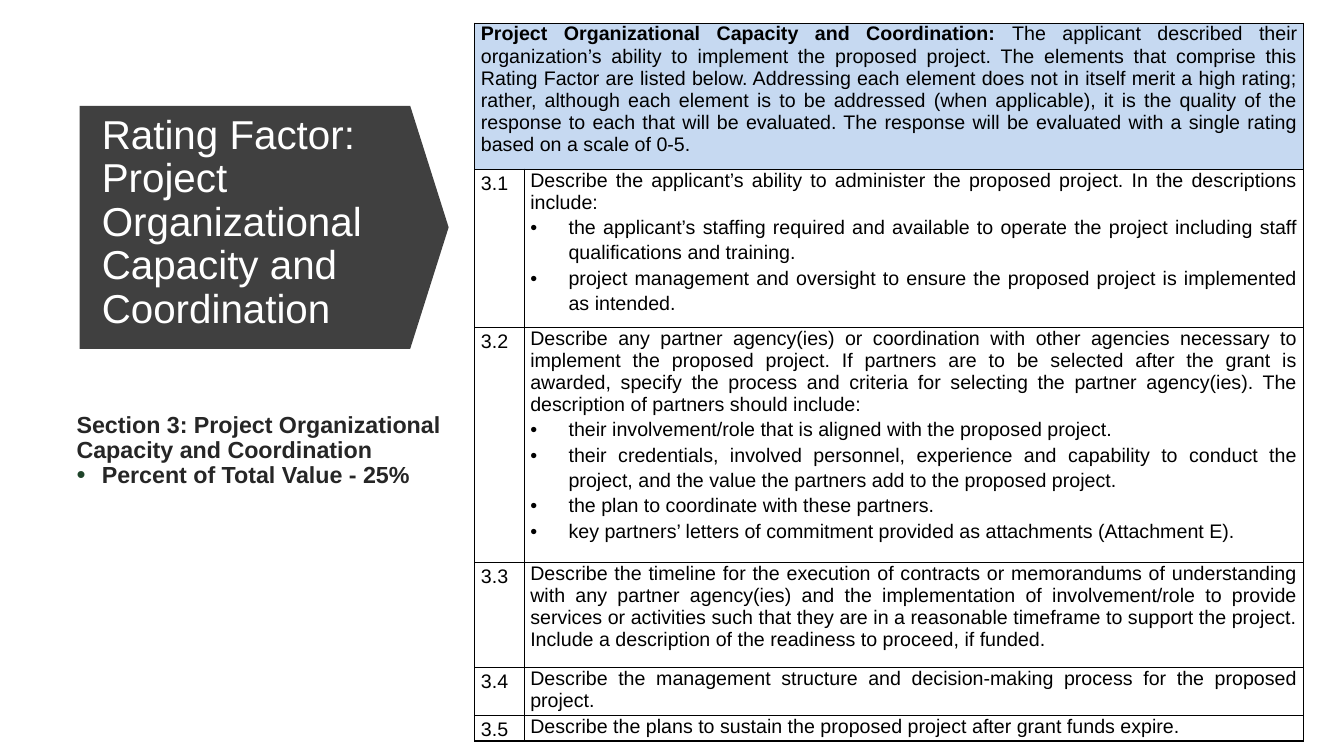
from lxml import etree
from pptx import Presentation
from pptx.dml.color import RGBColor
from pptx.enum.shapes import MSO_SHAPE
from pptx.enum.text import MSO_ANCHOR, MSO_AUTO_SIZE, PP_ALIGN
from pptx.oxml.ns import qn
from pptx.util import Inches, Pt

DOWN_ARROW = MSO_SHAPE.DOWN_ARROW
TOP, MIDDLE = MSO_ANCHOR.TOP, MSO_ANCHOR.MIDDLE
LEFT, JUSTIFY = PP_ALIGN.LEFT, PP_ALIGN.JUSTIFY
NO_AUTOFIT = MSO_AUTO_SIZE.NONE

WHITE = RGBColor(0xFF, 0xFF, 0xFF)
BLACK = RGBColor(0, 0, 0)
CHARCOAL = RGBColor(0x40, 0x40, 0x40)
INK = RGBColor(0x26, 0x26, 0x26)
GREEN = RGBColor(0x1F, 0x44, 0x2A)
PALE_BLUE = RGBColor(0xC6, 0xD9, 0xF1)

SLIDE_WIDTH, SLIDE_HEIGHT = 13.33, 7.5
ARROW_BOX = (0.79, 1.05, 3.66, 2.41)
SECTION_BOX = (0.66, 4.05, 4.07, 0.95)
TABLE_BOX = (4.71, 0.23, 8.22, 7.12)
COLUMN_WIDTHS = (0.49, 7.73)
ROW_HEIGHTS = (1.45, 1.57, 2.33, 1.04, 0.48, 0.25)

TITLE = "Rating Factor: Project Organizational Capacity and Coordination"
SECTION = "Section 3: Project Organizational Capacity and Coordination"
SECTION_VALUE = "Percent of Total Value - 25%"
FACTOR_NAME = "Project Organizational Capacity and Coordination: "
FACTOR_TEXT = (
    "The applicant described their organization’s ability to implement the proposed project. "
    "The elements that comprise this Rating Factor are listed below. Addressing each element "
    "does not in itself merit a high rating; rather, although each element is to be addressed "
    "(when applicable), it is the quality of the response to each that will be evaluated. "
    "The response will be evaluated with a single rating based on a scale of 0-5."
)
ELEMENTS = [
    ("3.1", "Describe the applicant’s ability to administer the proposed project. "
            "In the descriptions include:",
     ["the applicant’s staffing required and available to operate the project including "
      "staff qualifications and training.",
      "project management and oversight to ensure the proposed project is implemented "
      "as intended."]),
    ("3.2", "Describe any partner agency(ies) or coordination with other agencies necessary to "
            "implement the proposed project. If partners are to be selected after the grant is "
            "awarded, specify the process and criteria for selecting the partner agency(ies). "
            "The description of partners should include:",
     ["their involvement/role that is aligned with the proposed project.",
      "their credentials, involved personnel, experience and capability to conduct the "
      "project, and the value the partners add to the proposed project.",
      "the plan to coordinate with these partners.",
      "key partners’ letters of commitment provided as attachments (Attachment E)."]),
    ("3.3", "Describe the timeline for the execution of contracts or memorandums of "
            "understanding with any partner agency(ies) and the implementation of "
            "involvement/role to provide services or activities such that they are in a "
            "reasonable timeframe to support the project. Include a description of the "
            "readiness to proceed, if funded.", []),
    ("3.4", "Describe the management structure and decision-making process for the "
            "proposed project.", []),
    ("3.5", "Describe the plans to sustain the proposed project after grant funds expire.", []),
]


def set_all(target, values):
    """Set every named attribute on the target."""
    for name, value in values.items():
        setattr(target, name, value)


def place(shape, box):
    """Move a shape to a box given in inches."""
    set_all(shape, dict(zip(("left", "top", "width", "height"), map(Inches, box))))


def add_span(para, text, size, color, bold=False):
    """Add one formatted run to a paragraph."""
    span = para.add_run()
    span.text = text
    set_all(span.font, {"name": "Arial", "size": Pt(size), "bold": bold})
    span.font.color.rgb = color


def next_para(frame, **values):
    """Return the empty first paragraph or a new one, with its spacing set."""
    first = frame.paragraphs[0]
    para = frame.add_paragraph() if first.runs else first
    set_all(para, {"space_before": Pt(0), "space_after": Pt(0), **values})
    return para


def set_bullet(para, indent=0, color=None):
    """Give a paragraph a hanging bullet, or none when the indent is zero."""
    properties = para._p.get_or_add_pPr()
    properties.set("marL", str(Inches(indent)))
    properties.set("indent", str(-Inches(indent)))
    if not indent:
        etree.SubElement(properties, qn("a:buNone"))
        return
    if color is not None:
        tint = etree.SubElement(properties, qn("a:buClr"))
        etree.SubElement(tint, qn("a:srgbClr"), val=str(color))
        etree.SubElement(properties, qn("a:buSzPct"), val="110000")
    etree.SubElement(properties, qn("a:buFont"), typeface="Arial")
    etree.SubElement(properties, qn("a:buChar"), char="•")


def add_title_arrow(page, box):
    """Place the title on a dark arrow that points right and fills the box."""
    left, top, width, height = box
    shift = (width - height) / 2
    arrow = page.shapes.add_shape(DOWN_ARROW, 0, 0, 0, 0)
    place(arrow, (left + shift, top - shift, height, width))
    arrow.rotation = 270
    arrow.adjustments[0], arrow.adjustments[1] = 1, 0.158
    arrow.shadow.inherit = False
    arrow.fill.solid()
    arrow.fill.fore_color.rgb = CHARCOAL
    arrow.line.fill.background()

    title = page.shapes.title
    title.element.addprevious(arrow.element)
    place(title, (left + 0.12, top, width - 0.39, height - 0.08))
    frame = title.text_frame
    set_all(frame, {"word_wrap": True, "auto_size": NO_AUTOFIT, "vertical_anchor": MIDDLE})
    para = next_para(frame, alignment=LEFT, line_spacing=0.9)
    add_span(para, TITLE, 28.8, WHITE)


def add_section(page, box):
    """Place the section name and its share of the total value."""
    body = page.placeholders[1]
    place(body, box)
    frame = body.text_frame
    set_all(frame, {"word_wrap": True, "auto_size": NO_AUTOFIT, "vertical_anchor": TOP})
    for text, indent in ((SECTION, 0), (SECTION_VALUE, 0.25)):
        para = next_para(frame, alignment=LEFT, line_spacing=0.9)
        set_bullet(para, indent, GREEN)
        add_span(para, text, 16.6, INK, True)


def format_cell(cell, fill=None):
    """Set the margins, thin black borders and fill of a cell."""
    set_all(cell, {"margin_left": Inches(0.06), "margin_right": Inches(0.06),
                   "margin_top": 0, "margin_bottom": 0, "vertical_anchor": TOP})
    properties = cell._tc.get_or_add_tcPr()
    for side in ("a:lnL", "a:lnR", "a:lnT", "a:lnB"):
        border = etree.SubElement(properties, qn(side), w=str(Pt(1)))
        paint = etree.SubElement(border, qn("a:solidFill"))
        etree.SubElement(paint, qn("a:srgbClr"), val=str(BLACK))
    if fill is None:
        cell.fill.background()
    else:
        cell.fill.solid()
        cell.fill.fore_color.rgb = fill


def add_factor_table(page, box):
    """Place the rating factor heading and its numbered elements."""
    shape = page.shapes.add_table(len(ROW_HEIGHTS), len(COLUMN_WIDTHS), *map(Inches, box))
    table = shape.table
    set_all(table, {"first_row": False, "horz_banding": False})
    for column, width in zip(table.columns, COLUMN_WIDTHS):
        column.width = Inches(width)
    for index, height in enumerate(ROW_HEIGHTS):
        table.rows[index].height = Inches(height)
        for cell in table.rows[index].cells:
            format_cell(cell, None if index else PALE_BLUE)

    heading = table.cell(0, 0)
    heading.merge(table.cell(0, 1))
    para = next_para(heading.text_frame, alignment=JUSTIFY)
    add_span(para, FACTOR_NAME, 14, BLACK, True)
    add_span(para, FACTOR_TEXT, 14, BLACK)

    for row, (number, description, points) in enumerate(ELEMENTS, 1):
        para = next_para(table.cell(row, 0).text_frame, alignment=JUSTIFY,
                         line_spacing=1.15, space_after=Pt(10))
        add_span(para, number, 14, BLACK)
        frame = table.cell(row, 1).text_frame
        add_span(next_para(frame, alignment=JUSTIFY), description, 14, BLACK)
        for point in points:
            para = next_para(frame, alignment=JUSTIFY, line_spacing=1.15)
            set_bullet(para, 0.38)
            add_span(para, point, 14, BLACK)


def main():
    """Build the rating factor slide and save it."""
    deck = Presentation()
    set_all(deck, {"slide_width": Inches(SLIDE_WIDTH), "slide_height": Inches(SLIDE_HEIGHT)})
    page = deck.slides.add_slide(deck.slide_layouts[1])
    add_title_arrow(page, ARROW_BOX)
    add_section(page, SECTION_BOX)
    add_factor_table(page, TABLE_BOX)
    deck.save("out.pptx")


if __name__ == "__main__":
    main()
